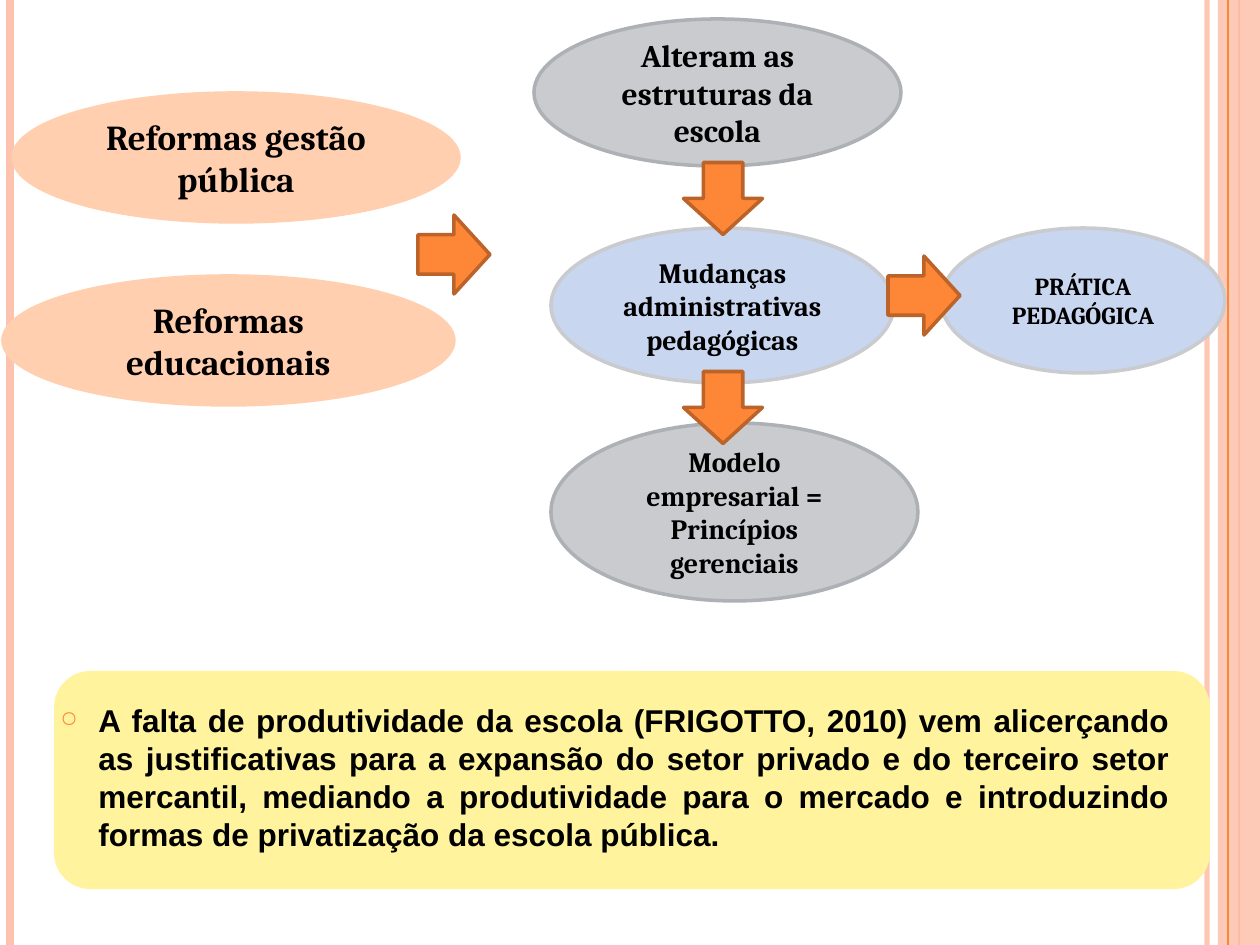
import pptx
import pptx.util
import pptx.dml.color
import pptx.enum.shapes
import pptx.enum.text
import pptx.oxml.ns
import lxml.etree
from dataclasses import dataclass

SHAPE = pptx.enum.shapes.MSO_SHAPE
ALIGN = pptx.enum.text.PP_ALIGN
ANCHOR = pptx.enum.text.MSO_ANCHOR
SCALE = 914400 / 126


@dataclass(frozen=True)
class Theme:
    rose: str = "FEC3AE"
    orange: str = "FE8637"
    rust: str = "BC6329"
    yellow: str = "FFF39D"
    peach: str = "FFCFAF"
    grey: str = "C9CBCE"
    steel: str = "ADB0B5"
    blue: str = "C8D6F0"
    ink: str = "000000"
    serif: str = "Cambria"
    sans: str = "Arial"
    large: int = 20
    body: int = 18
    mid: int = 16
    small: int = 14
    edge: int = 2


def px(n):
    return round(n * SCALE)


def rgb(code):
    return pptx.dml.color.RGBColor.from_string(code)


def child(node, tag, **attrs):
    return lxml.etree.SubElement(node, pptx.oxml.ns.qn(tag), attrs)


def fade(fmt, pct):
    tag = pptx.oxml.ns.qn("a:srgbClr")
    for node in fmt.iter(tag):
        child(node, "a:alpha", val=str(pct * 1000))


def write(frame, text, size, font, color, align=ALIGN.CENTER, anchor=ANCHOR.MIDDLE):
    frame.word_wrap = True
    frame.vertical_anchor = anchor
    frame.text = text
    for para in frame.paragraphs:
        para.alignment = align
        for run in para.runs:
            run.font.size = pptx.util.Pt(size)
            run.font.name = font
            run.font.bold = True
            run.font.color.rgb = rgb(color)


class Deck:
    def __init__(self, theme):
        self.theme = theme
        self.file = pptx.Presentation()
        self.file.slide_width = px(1260)
        self.file.slide_height = px(945)
        self.slide = self.file.slides.add_slide(self.file.slide_layouts[6])

    def rule(self, x, width, color, alpha=None):
        kind = pptx.enum.shapes.MSO_CONNECTOR.STRAIGHT
        line = self.slide.shapes.add_connector(kind, px(x), 0, px(x), px(945))
        line.line.color.rgb = rgb(color)
        line.line.width = pptx.util.Pt(width)
        props = line._element.spPr
        child(props, "a:effectLst")
        if alpha:
            fade(props, alpha)

    def shape(self, kind, x, y, w, h, fill, line=None, alpha=None):
        item = self.slide.shapes.add_shape(kind, px(x), px(y), px(w), px(h))
        item.shadow.inherit = False
        item.fill.solid()
        item.fill.fore_color.rgb = rgb(fill)
        if line:
            item.line.color.rgb = rgb(line)
            item.line.width = pptx.util.Pt(self.theme.edge)
        else:
            item.line.fill.background()
        if alpha:
            fade(item._element.spPr, alpha)
        return item

    def oval(self, text, x, y, w, h, fill, line, size):
        item = self.shape(SHAPE.OVAL, x, y, w, h, fill, line)
        write(item.text_frame, text, size, self.theme.serif, self.theme.ink)

    def arrow(self, x, y, turn=0):
        item = self.shape(SHAPE.RIGHT_ARROW, x, y, 72, 79,
                          self.theme.orange, self.theme.rust)
        item.rotation = turn

    def bullet(self, text, x, y, w, h):
        box = self.slide.shapes.add_textbox(px(x), px(y), px(w), px(h))
        write(box.text_frame, text, self.theme.body, self.theme.sans,
              self.theme.ink, ALIGN.JUSTIFY, ANCHOR.TOP)
        props = box.text_frame.paragraphs[0]._p.get_or_add_pPr()
        props.set("marL", str(px(38)))
        props.set("indent", str(px(-38)))
        tint = child(props, "a:buClr")
        child(tint, "a:srgbClr", val=self.theme.orange)
        child(props, "a:buSzPct", val="70000")
        child(props, "a:buChar", char="○")


def main():
    t = Theme()
    deck = Deck(t)

    deck.rule(1207, 3, t.rose, alpha=93)
    deck.rule(10, 4.5, t.rose)
    deck.rule(1239, 1.5, t.orange)
    deck.shape(SHAPE.RECTANGLE, 1218, 0, 42, 945, t.rose, alpha=87)
    deck.rule(1228, 0.75, t.orange)

    deck.shape(SHAPE.ROUNDED_RECTANGLE, 54, 671, 1156, 218, t.yellow)
    deck.bullet("A falta de produtividade da escola (FRIGOTTO, 2010) vem "
                "alicerçando as justificativas para a expansão do setor privado "
                "e do terceiro setor mercantil, mediando a produtividade para o "
                "mercado e introduzindo formas de privatização da escola pública.",
                48, 695, 1134, 174)

    deck.oval("Alteram as estruturas da escola",
              534, 19, 367, 147, t.grey, t.steel, t.body)
    deck.oval("Reformas educacionais",
              3, 276, 451, 129, t.peach, t.peach, t.large)
    deck.oval("Reformas gestão pública",
              13, 93, 446, 129, t.peach, t.peach, t.large)
    deck.oval("Mudanças administrativas\npedagógicas",
              551, 228, 343, 155, t.blue, t.grey, t.mid)
    deck.oval("Modelo empresarial = Princípios gerenciais",
              551, 423, 367, 178, t.grey, t.steel, t.mid)
    for y in (368, 159):
        deck.arrow(687, y, turn=90)
    deck.oval("PRÁTICA\nPEDAGÓGICA",
              941, 228, 284, 145, t.blue, t.grey, t.small)
    for x, y in ((888, 256), (418, 215)):
        deck.arrow(x, y)

    deck.file.save("out.pptx")


if __name__ == "__main__":
    main()
